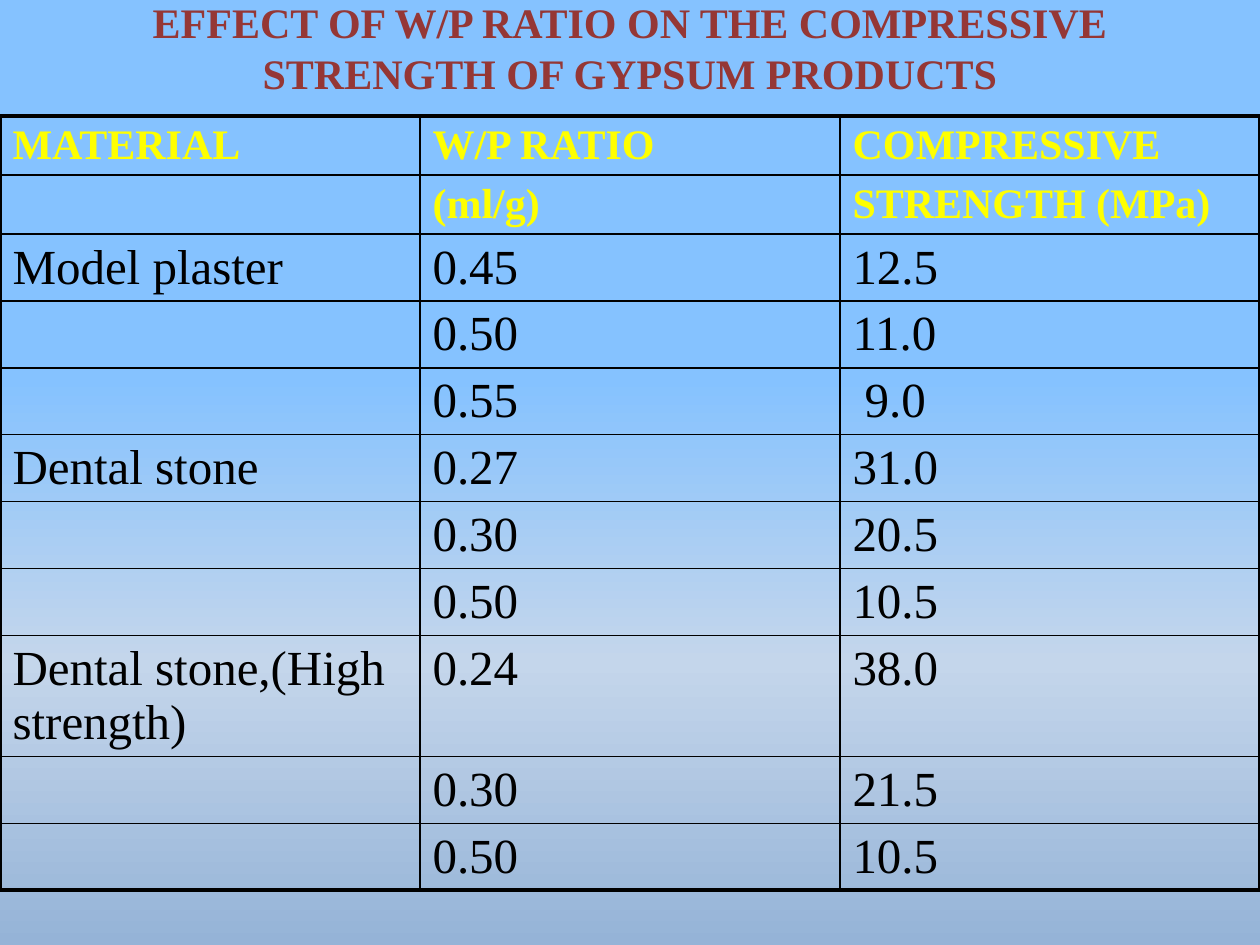
from dataclasses import dataclass

from lxml import etree
from pptx import Presentation, util as u
from pptx.dml.color import RGBColor
from pptx.enum import text
from pptx.oxml import ns


@dataclass(frozen=True)
class Theme:
    font: str = "Times New Roman"
    title: str = "953735"
    header: str = "FFFF00"
    body: str = "000000"
    border: str = "000000"
    title_size: int = 24
    header_size: int = 24
    body_size: int = 28
    outer_line: float = 2.25
    inner_line: float = 1
    sky: tuple = ((40, "85C2FF"), (70, "C4D6EB"), (100, "95B3D7"), (100, "FFEBFA"))


THEME = Theme()
TITLE = "EFFECT OF W/P RATIO ON THE COMPRESSIVE STRENGTH OF GYPSUM PRODUCTS"
HEADERS = [
    ("MATERIAL", "W/P RATIO", "COMPRESSIVE"),
    ("", "(ml/g)", "STRENGTH (MPa)"),
]
MATERIALS = [
    ("Model plaster", [("0.45", "12.5"), ("0.50", "11.0"), ("0.55", " 9.0")]),
    ("Dental stone", [("0.27", "31.0"), ("0.30", "20.5"), ("0.50", "10.5")]),
    ("Dental stone,(High strength)",
     [("0.24", "38.0"), ("0.30", "21.5"), ("0.50", "10.5")]),
]


def add_node(parent, tag, **attributes):
    return etree.SubElement(parent, ns.qn(tag), attributes)


def format_font(font, size, color, bold):
    values = {"name": THEME.font, "size": u.Pt(size), "bold": bold}
    for name, value in values.items():
        setattr(font, name, value)
    font.color.rgb = RGBColor.from_string(color)


def paint_background(page):
    """Vertical gradient with the theme's stops."""
    fill = page.background.fill
    fill.gradient()
    fill.gradient_angle = 270  # counter-clockwise: runs from top to bottom
    stops = page.element.find(".//" + ns.qn("a:gsLst"))
    for stop in list(stops):
        stops.remove(stop)
    for position, color in THEME.sky:
        stop = add_node(stops, "a:gs", pos=str(position * 1000))
        add_node(stop, "a:srgbClr", val=color)


def set_title(page):
    box = page.shapes.title
    frame = {"left": 0.5, "top": -0.25, "width": 9, "height": 1.25}
    for name, value in frame.items():
        setattr(box, name, u.Inches(value))
    box.text_frame.vertical_anchor = text.MSO_ANCHOR.MIDDLE
    para = box.text_frame.paragraphs[0]
    para.alignment = text.PP_ALIGN.CENTER
    span = para.add_run()
    span.text = TITLE
    format_font(span.font, THEME.title_size, THEME.title, True)


def set_borders(cell, widths):
    properties = cell._tc.get_or_add_tcPr()
    for index, (side, width) in enumerate(widths.items()):
        line = add_node(properties, f"a:ln{side}", w=str(u.Pt(width)))
        fill = add_node(line, "a:solidFill")
        add_node(fill, "a:srgbClr", val=THEME.border)
        properties.insert(index, line)  # borders come before the fill


def fill_cell(cell, words, is_header):
    cell.fill.background()
    para = cell.text_frame.paragraphs[0]
    spacing = add_node(para._p.get_or_add_pPr(), "a:spcBef")
    add_node(spacing, "a:spcPct", val="20000")
    if words:
        span = para.add_run()
        span.text = words
        size = THEME.header_size if is_header else THEME.body_size
        color = THEME.header if is_header else THEME.body
        format_font(span.font, size, color, is_header)


def add_strength_table(page):
    # The material is named only on the first row of its group
    rows = HEADERS + [
        (material if index == 0 else "", *values)
        for material, group in MATERIALS
        for index, values in enumerate(group)
    ]
    last_row, last_col = len(rows) - 1, len(rows[0]) - 1
    table = page.shapes.add_table(
        len(rows), len(rows[0]), u.Inches(0), u.Inches(0.92),
        u.Inches(10), u.Inches(0.4 * len(rows))).table
    table.first_row = table.horz_banding = False

    for r, row in enumerate(rows):
        is_header = r < len(HEADERS)
        # Rows grow to fit their text
        table.rows[r].height = u.Inches(0.4)
        for c, words in enumerate(row):
            cell = table.cell(r, c)
            fill_cell(cell, words, is_header)
            on_edge = {"L": c == 0, "R": c == last_col,
                       "T": r == 0, "B": r == last_row}
            set_borders(cell, {
                side: THEME.outer_line if edge else THEME.inner_line
                for side, edge in on_edge.items()})


def main():
    deck = Presentation()
    deck.slide_width, deck.slide_height = u.Inches(10), u.Inches(7.5)
    page = deck.slides.add_slide(deck.slide_layouts.get_by_name("Title Only"))
    paint_background(page)
    set_title(page)
    add_strength_table(page)
    deck.save("out.pptx")


if __name__ == "__main__":
    main()
